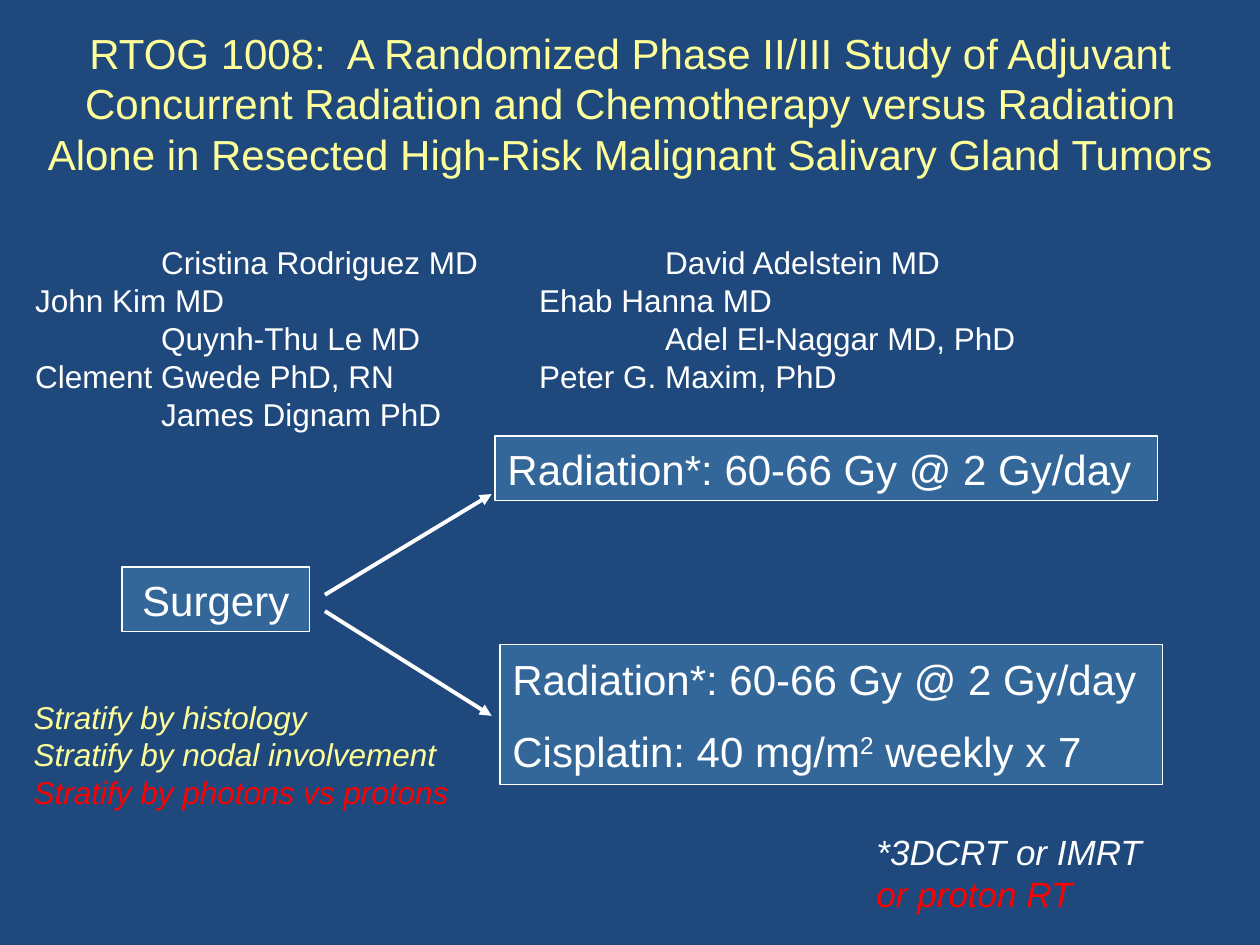
from lxml.etree import SubElement
from pptx import Presentation
from pptx.dml.color import RGBColor
from pptx.enum.shapes import MSO_CONNECTOR, MSO_SHAPE
from pptx.enum.text import PP_ALIGN
from pptx.oxml.ns import qn
from pptx.util import Cm, Pt

BLUE, PANEL, WHITE, YELLOW, RED = "1F497D", "336699", "FFFFFF", "FFFF99", "FF0000"


def color(hex_string):
    return RGBColor.from_string(hex_string)


def add_line(box, text, size, hex_string, space=0, align=PP_ALIGN.LEFT, italic=False):
    """Append a paragraph, filling the empty first one of a new box."""
    frame = box.text_frame
    frame.word_wrap = True
    paragraph = frame.paragraphs[0]
    if paragraph.runs:
        paragraph = frame.add_paragraph()
    paragraph.alignment = align
    paragraph.space_before = Pt(space)
    span = paragraph.add_run()
    span.text = text
    formats = {"name": "Arial", "size": Pt(size), "italic": italic}
    for name, value in formats.items():
        setattr(span.font, name, value)
    span.font.color.rgb = color(hex_string)
    return paragraph


deck = Presentation()
deck.slide_width, deck.slide_height = Cm(25.4), Cm(19.05)
page = deck.slides.add_slide(deck.slide_layouts[6])
page.background.fill.solid()
page.background.fill.fore_color.rgb = color(BLUE)

# Title and investigators
heading = page.shapes.add_textbox(Cm(0.46), Cm(0.43), Cm(24.49), Cm(9.32))
add_line(
    heading,
    "RTOG 1008:  A Randomized Phase II/III Study of Adjuvant Concurrent Radiation "
    "and Chemotherapy versus Radiation Alone in Resected High-Risk Malignant "
    "Salivary Gland Tumors",
    24, YELLOW, align=PP_ALIGN.CENTER,
)
investigators = [
    ("Cristina Rodriguez MD", "David Adelstein MD"),
    ("John Kim MD", "Ehab Hanna MD"),
    ("Quynh-Thu Le MD", "Adel El-Naggar MD, PhD"),
    ("Clement Gwede PhD, RN", "Peter G. Maxim, PhD"),
    ("James Dignam PhD",),
]
for row, names in enumerate(investigators):
    indented = row % 2 == 0
    text = ("\t" if indented else "") + "\t".join(names)
    paragraph = add_line(heading, text, 18, WHITE, space=37 if row == 0 else 0)
    tabs = SubElement(paragraph._p.get_or_add_pPr(), qn("a:tabLst"))
    for stop in (2.54, 12.7) if indented else (10.16,):
        SubElement(tabs, qn("a:tab"), pos=str(Cm(stop)), algn="l")

# Treatment boxes
radiation = "Radiation*: 60-66 Gy @ 2 Gy/day"
treatments = [
    (2.46, 11.43, 3.78, 1.3, PP_ALIGN.CENTER, ["Surgery"]),
    (9.98, 8.79, 13.36, 1.3, PP_ALIGN.LEFT, [radiation]),
    (10.08, 13, 13.36, 2.82, PP_ALIGN.LEFT, [radiation, "Cisplatin: 40 mg/m"]),
]
for left, top, width, height, align, lines in treatments:
    box = page.shapes.add_shape(
        MSO_SHAPE.RECTANGLE, Cm(left), Cm(top), Cm(width), Cm(height)
    )
    box.shadow.inherit = False
    box.fill.solid()
    box.fill.fore_color.rgb = color(PANEL)
    box.line.color.rgb = color(WHITE)
    box.line.width = Pt(0.75)
    for index, text in enumerate(lines):
        paragraph = add_line(box, text, 24, WHITE, space=12 * index, align=align)

# The last paragraph is the cisplatin dose
for text, baseline in (("2", "30000"), (" weekly x 7", "0")):
    span = paragraph.add_run()
    span.text = text
    span.font.name, span.font.size = "Arial", Pt(24)
    span.font.color.rgb = color(WHITE)
    span._r.get_or_add_rPr().set("baseline", baseline)

# Arrows from surgery to the two arms
for start, end in ((11.99, 9.96), (12.32, 14.43)):
    arrow = page.shapes.add_connector(
        MSO_CONNECTOR.STRAIGHT, Cm(6.55), Cm(start), Cm(9.91), Cm(end)
    )
    arrow.line.color.rgb = color(WHITE)
    arrow.line.width = Pt(2.25)
    SubElement(arrow.line._get_or_add_ln(), qn("a:tailEnd"), type="triangle")
    SubElement(arrow._element.spPr, qn("a:effectLst"))

# Stratification and technique notes
notes = [
    (0.43, 13.94, 9.04, 4.88, 18, [
        ("Stratify by histology", YELLOW),
        ("Stratify by nodal involvement", YELLOW),
        ("Stratify by photons vs protons", RED),
    ]),
    (17.42, 16.61, 6.35, 1.96, 20, [("*3DCRT or IMRT", WHITE), ("or proton RT", RED)]),
]
for left, top, width, height, size, lines in notes:
    box = page.shapes.add_textbox(Cm(left), Cm(top), Cm(width), Cm(height))
    for text, hex_string in lines:
        add_line(box, text, size, hex_string, italic=True)

deck.save("out.pptx")
